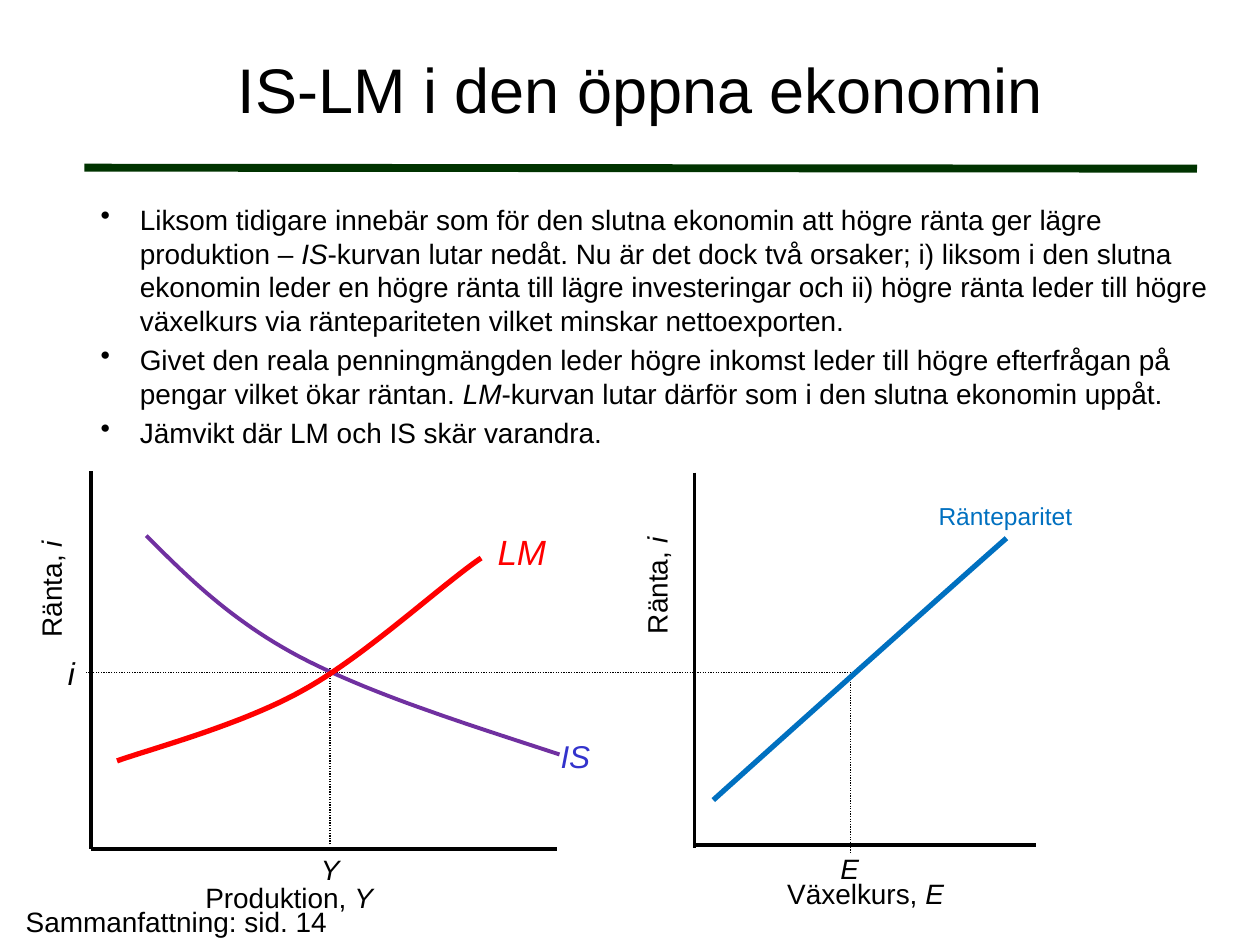
import pptx
import pptx.util
import pptx.dml.color
import pptx.enum.dml
import pptx.enum.shapes
import pptx.enum.text
import lxml.etree

Cm, Pt = pptx.util.Cm, pptx.util.Pt
ALIGN = pptx.enum.text.PP_ALIGN
ANCHOR = pptx.enum.text.MSO_ANCHOR
DOT = pptx.enum.dml.MSO_LINE.ROUND_DOT

THEME = {
    "font": "Arial",
    "ink": "000000", "rule": "003300", "is": "7030A0", "mark": "3333CC",
    "lm": "FF0000", "par": "0070C0",
    "title": 36, "body": 16, "big": 20, "mid": 18, "small": 14,
}

# Content: lengths in cm, *italic* between stars
TITLE = "IS-LM i den öppna ekonomin"
BODY = [
    "Liksom tidigare innebär som för den slutna ekonomin att högre ränta ger "
    "lägre produktion – *IS*-kurvan lutar nedåt. Nu är det dock två orsaker; "
    "i) liksom i den slutna ekonomin leder en högre ränta till lägre "
    "investeringar och ii) högre ränta leder till högre växelkurs via "
    "räntepariteten vilket minskar nettoexporten.",
    "Givet den reala penningmängden leder högre inkomst leder till högre "
    "efterfrågan på pengar vilket ökar räntan. *LM*-kurvan lutar därför som "
    "i den slutna ekonomin uppåt.",
    "Jämvikt där LM och IS skär varandra.",
]
NOTE = "Sammanfattning: sid. 14"

# Text, box, size, colour, turn
LABELS = [
    ("Produktion, *Y*", (3.89, 17.63, 3.89, 0.94), "body", "ink", 0),
    ("Växelkurs, *E*", (15.62, 17.55, 3.68, 0.94), "body", "ink", 0),
    ("Ränta, *i*", (-0.2, 11.4, 2.46, 0.94), "body", "ink", 270),
    ("Ränta, *i*", (12.01, 11.33, 2.46, 0.94), "body", "ink", 270),
    ("*Y*", (6.22, 17.07, 0.89, 0.94), "body", "ink", 0),
    ("*E*", (16.69, 17.04, 0.89, 0.94), "body", "ink", 0),
    ("*i*", (1.12, 13.06, 0.66, 1.02), "mid", "ink", 0),
    ("*IS*", (11.05, 14.73, 1.12, 1.02), "mid", "mark", 0),
    ("*LM*", (9.78, 10.57, 1.68, 1.09), "big", "lm", 0),
    ("Ränteparitet", (18.67, 9.98, 3.23, 0.86), "small", "par", 0),
]

RULE = (1.7, 3.38, 24.13, 3.4)
AXES = [
    (1.83, 9.5, 1.83, 17.12), (1.83, 17.12, 11.23, 17.12),
    (14, 9.53, 14, 17.09), (14.02, 17.04, 20.88, 17.04),
]
RATE, OUT, EXCH = 13.56, 6.65, 17.15    # equilibrium i, Y and E
GUIDES = [
    (6.78, RATE, EXCH, RATE), (6.58, RATE, 1.73, RATE),
    (OUT, 17.02, OUT, 13.44), (EXCH, 13.64, EXCH, 17.2),
]

# Colour, width, Bezier points (start, then three for each arc)
CURVES = [
    ("is", 2.25, [(2.95, 10.8), (3.78, 11.63), (4.65, 12.5), (6.02, 13.23),
                  (7.42, 13.97), (9.35, 14.58), (11.28, 15.21)]),
    ("par", 3, [(14.38, 16.13), (15.37, 15.24), (19.05, 11.94),
                (20.29, 10.85)]),
    ("lm", 3, [(2.36, 15.34), (3, 15.11), (4.88, 14.61), (6.1, 13.92),
               (7.32, 13.26), (8.94, 11.76), (9.7, 11.25)]),
]
STEPS = 24


def tint(name):
    return pptx.dml.color.RGBColor.from_string(THEME[name])


def ink(line, color, width):
    line.color.rgb = tint(color)
    line.width = Pt(width)


def draw(slide, ends, color, width, dash=None):
    kind = pptx.enum.shapes.MSO_CONNECTOR.STRAIGHT
    line = slide.shapes.add_connector(kind, *map(Cm, ends))
    ink(line.line, color, width)
    if dash:
        line.line.dash_style = dash
    tag = pptx.oxml.ns.qn("a:effectLst")
    lxml.etree.SubElement(line._element.spPr, tag)


def write(slide, texts, box, size="body", color="ink", align=None, wrap=True):
    shape = slide.shapes.add_textbox(*map(Cm, box))
    frame = shape.text_frame
    frame.word_wrap = wrap
    for num, text in enumerate(texts):
        para = frame.add_paragraph() if num else frame.paragraphs[0]
        para.alignment = align
        para.font.name = THEME["font"]
        para.font.size = Pt(THEME[size])
        para.font.color.rgb = tint(color)
        for pos, part in enumerate(text.split("*")):
            if part:
                run = para.add_run()
                run.text = part
                if pos % 2:
                    run.font.italic = True
    return shape


def list_up(frame):
    for para in frame.paragraphs:
        para.space_before = para.space_after = Pt(1.6)
        props = para._p.get_or_add_pPr()
        props.set("marL", str(Cm(0.79)))
        props.set("indent", str(-Cm(0.79)))
        mark = lxml.etree.Element(pptx.oxml.ns.qn("a:buChar"), char="•")
        props.find(pptx.oxml.ns.qn("a:defRPr")).addprevious(mark)


def bend(slide, color, width, nodes):
    dots = []
    for k in range(0, len(nodes) - 1, 3):
        for n in range(1, STEPS + 1):
            t = n / STEPS
            u = 1 - t
            mix = (u**3, 3 * u * u * t, 3 * u * t * t, t**3)
            dots.append([Cm(sum(m * p[a] for m, p in zip(mix, nodes[k:k + 4])))
                         for a in (0, 1)])
    path = slide.shapes.build_freeform(*map(Cm, nodes[0]))
    path.add_line_segments(dots, close=False)
    shape = path.convert_to_shape()
    shape.shadow.inherit = False
    shape.fill.background()
    ink(shape.line, color, width)


def main():
    deck = pptx.Presentation()
    deck.slide_width, deck.slide_height = Cm(25.4), Cm(19.05)
    slide = deck.slides.add_slide(deck.slide_layouts[6])

    # Heading and bullets
    draw(slide, RULE, "rule", 4.5)
    head = write(slide, [TITLE], (1.7, 0.2, 22.43, 3.15), "title",
                 align=ALIGN.CENTER)
    head.text_frame.vertical_anchor = ANCHOR.MIDDLE
    list_up(write(slide, BODY, (1.78, 3.96, 23.16, 2.26)).text_frame)

    # Both diagrams
    for ends in AXES:
        draw(slide, ends, "ink", 2.25)
    for ends in GUIDES:
        draw(slide, ends, "ink", 0.75, DOT)
    for curve in CURVES:
        bend(slide, *curve)
    for text, box, size, color, turn in LABELS:
        label = write(slide, [text], box, size, color, wrap=False)
        label.text_frame.auto_size = (
            pptx.enum.text.MSO_AUTO_SIZE.SHAPE_TO_FIT_TEXT)
        label.rotation = turn

    # Page reference
    write(slide, [NOTE], (0, 18.11, 7.11, 0.94), align=ALIGN.CENTER)
    deck.save("out.pptx")


if __name__ == "__main__":
    main()
